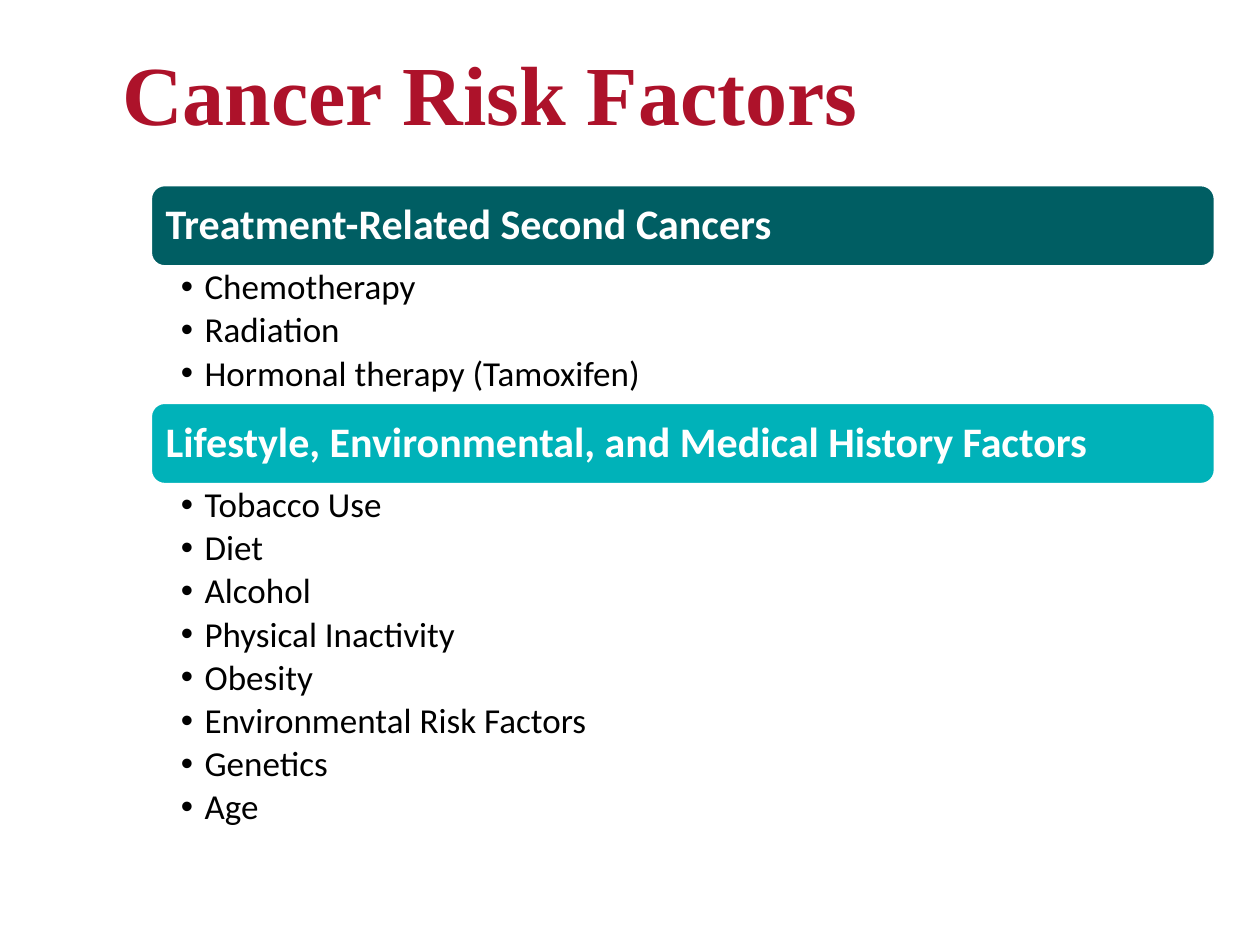
from lxml.etree import SubElement
from pptx import Presentation
from pptx.dml.color import RGBColor
from pptx.enum.shapes import MSO_SHAPE
from pptx.enum.text import MSO_ANCHOR, MSO_AUTO_SIZE, PP_ALIGN
from pptx.oxml.ns import qn
from pptx.util import Pt

CRIMSON = RGBColor(0xAD, 0x12, 0x2A)
DARK_TEAL = RGBColor(0x00, 0x5E, 0x63)
TEAL = RGBColor(0x00, 0xB2, 0xB9)
WHITE = RGBColor(0xFF, 0xFF, 0xFF)
BLACK = RGBColor(0x00, 0x00, 0x00)

# Heading, bar colour, list height, items
SECTIONS = [
    ("Treatment-Related Second Cancers", DARK_TEAL, 78.4,
     ["Chemotherapy", "Radiation", "Hormonal therapy (Tamoxifen)"]),
    ("Lifestyle, Environmental, and Medical History Factors", TEAL, 208,
     ["Tobacco Use", "Diet", "Alcohol", "Physical Inactivity", "Obesity",
      "Environmental Risk Factors", "Genetics", "Age"]),
]
SECTION_LEFT, SECTION_TOP, SECTION_WIDTH, BAR_HEIGHT = 86.4, 106, 607.6, 46
BULLET_INDENT = 13.5


class SlideBuilder:
    """Holds the text styles and the slide being filled."""

    TITLE = {"name": "Times New Roman", "size": Pt(48), "bold": True}
    HEADING = {"name": "Calibri", "size": Pt(24), "bold": True}
    ITEM = {"name": "Calibri", "size": Pt(20), "bold": False}

    def __init__(self, slide):
        self.slide = slide

    def place(self, shape, left, top, width, height):
        shape.left, shape.top = Pt(left), Pt(top)
        shape.width, shape.height = Pt(width), Pt(height)

    def frame(self, shape, anchor, margins):
        frame = shape.text_frame
        sides = ("margin_left", "margin_top", "margin_right", "margin_bottom")
        values = {side: Pt(margin) for side, margin in zip(sides, margins)}
        values |= {"word_wrap": True, "auto_size": MSO_AUTO_SIZE.NONE,
                   "vertical_anchor": anchor}
        for name, value in values.items():
            setattr(frame, name, value)
        return frame

    def fill_paragraph(self, paragraph, text, style, color, space_before=0):
        values = {"alignment": PP_ALIGN.LEFT, "line_spacing": 0.9,
                  "space_before": Pt(space_before), "space_after": Pt(0)}
        for name, value in values.items():
            setattr(paragraph, name, value)
        run = paragraph.add_run()
        run.text = text
        for name, value in style.items():
            setattr(run.font, name, value)
        run.font.color.rgb = color

    def title(self, text):
        shape = self.slide.shapes.title
        self.place(shape, 64.8, 27.4, 474.5, 95.8)
        frame = self.frame(shape, MSO_ANCHOR.TOP, (5, 3, 5, 3))
        self.fill_paragraph(frame.paragraphs[0], text, self.TITLE, CRIMSON)

    def bar(self, text, color, top):
        shape = self.slide.shapes.add_shape(
            MSO_SHAPE.ROUNDED_RECTANGLE, Pt(SECTION_LEFT), Pt(top),
            Pt(SECTION_WIDTH), Pt(BAR_HEIGHT))
        shape.shadow.inherit = False
        shape.fill.solid()
        shape.fill.fore_color.rgb = color
        shape.line.color.rgb = WHITE
        shape.line.width = Pt(1)
        frame = self.frame(shape, MSO_ANCHOR.MIDDLE, (6, 6, 6, 6))
        self.fill_paragraph(frame.paragraphs[0], text, self.HEADING, WHITE)

    def bullet(self, paragraph):
        properties = paragraph._p.get_or_add_pPr()
        properties.set("marL", str(Pt(BULLET_INDENT)))
        properties.set("indent", str(-Pt(BULLET_INDENT)))
        color = SubElement(properties, qn("a:buClr"))
        SubElement(color, qn("a:srgbClr"), val=str(BLACK))
        SubElement(properties, qn("a:buChar"), char="•")

    def bullet_list(self, placeholder, items, top, height):
        self.place(placeholder, SECTION_LEFT, top, SECTION_WIDTH, height)
        frame = self.frame(placeholder, MSO_ANCHOR.TOP, (17, 2, 11.5, 2))
        for index, item in enumerate(items):
            paragraph = frame.add_paragraph() if index else frame.paragraphs[0]
            paragraph.level = 1
            self.bullet(paragraph)
            self.fill_paragraph(paragraph, item, self.ITEM, BLACK,
                                3.1 if index else 0)


def main():
    presentation = Presentation()
    presentation.slide_width, presentation.slide_height = Pt(720), Pt(540)
    # "Two Content" layout: a title and two lists
    slide = presentation.slides.add_slide(presentation.slide_layouts[3])
    builder = SlideBuilder(slide)
    builder.title("Cancer Risk Factors")

    # Each section is a coloured bar with its list right below
    top = SECTION_TOP
    for number, (heading, color, height, items) in enumerate(SECTIONS, 1):
        builder.bar(heading, color, top)
        builder.bullet_list(slide.placeholders[number], items,
                            top + BAR_HEIGHT, height)
        top += BAR_HEIGHT + height

    presentation.save("out.pptx")


if __name__ == "__main__":
    main()
